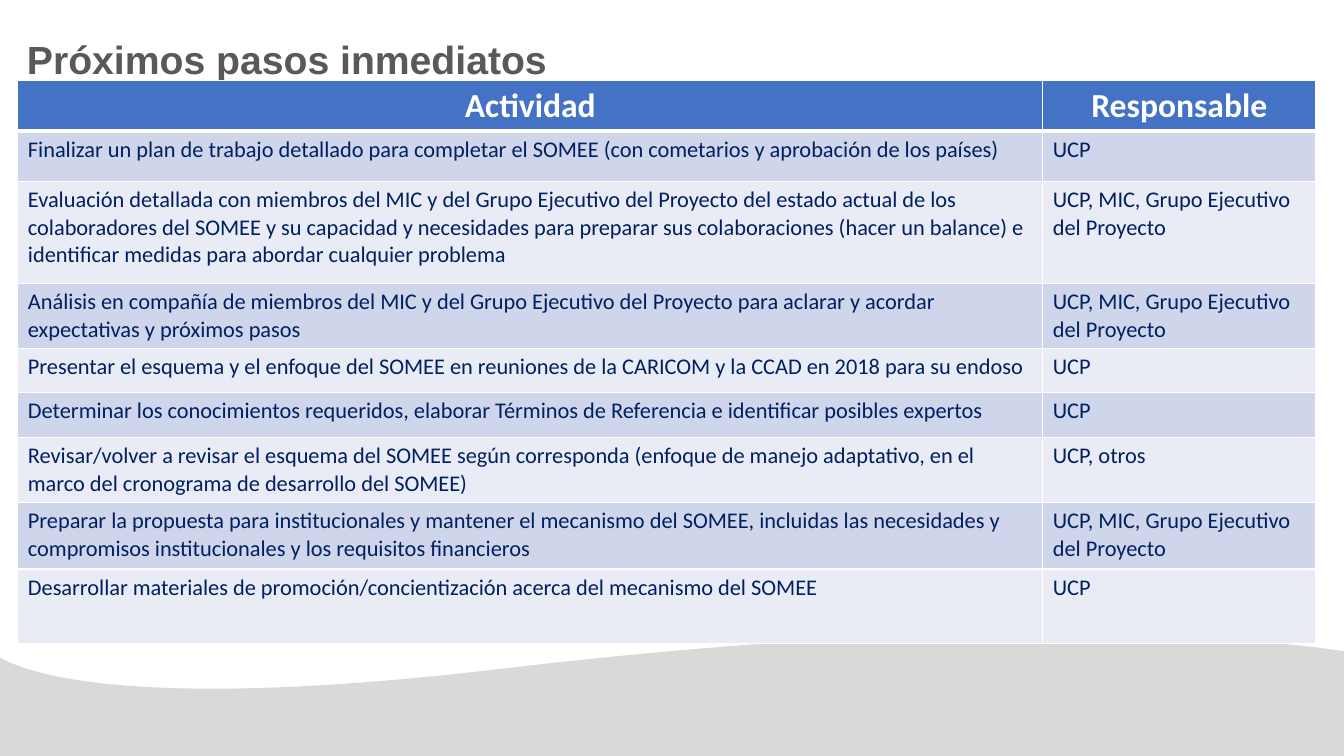
from lxml import etree
from pptx import Presentation
from pptx.dml.color import RGBColor
from pptx.enum.text import PP_ALIGN
from pptx.oxml.ns import qn
from pptx.util import Cm, Pt

WHITE = RGBColor(0xFF, 0xFF, 0xFF)
TITLE_GREY = RGBColor(0x59, 0x59, 0x59)
WAVE_GREY = RGBColor(0xD9, 0xD9, 0xD9)
HEADER_BLUE = RGBColor(0x44, 0x72, 0xC4)
NAVY = RGBColor(0x00, 0x20, 0x60)
BANDS = [RGBColor(0xCF, 0xD5, 0xEA), RGBColor(0xE9, 0xEB, 0xF5)]

UCP = "UCP"
UCP_MIC = "UCP, MIC, Grupo Ejecutivo del Proyecto"
# row height in cm, activity, responsible
ROWS = [
    (1.22, "Actividad", "Responsable"),
    (1.27, "Finalizar un plan de trabajo detallado para completar el SOMEE "
           "(con cometarios y aprobación de los países)", UCP),
    (2.57, "Evaluación detallada con miembros del MIC y del Grupo Ejecutivo del Proyecto "
           "del estado actual de los colaboradores del SOMEE y su capacidad y necesidades "
           "para preparar sus colaboraciones (hacer un balance) e identificar medidas para "
           "abordar cualquier problema", UCP_MIC),
    (1.64, "Análisis en compañía de miembros del MIC y del Grupo Ejecutivo del Proyecto "
           "para aclarar y acordar expectativas y próximos pasos", UCP_MIC),
    (1.1, "Presentar el esquema y el enfoque del SOMEE en reuniones de la CARICOM y la "
          "CCAD en 2018 para su endoso", UCP),
    (1.14, "Determinar los conocimientos requeridos, elaborar Términos de Referencia e "
           "identificar posibles expertos", UCP),
    (1.64, "Revisar/volver a revisar el esquema del SOMEE según corresponda (enfoque de "
           "manejo adaptativo, en el marco del cronograma de desarrollo del SOMEE)",
     "UCP, otros"),
    (1.68, "Preparar la propuesta para institucionales y mantener el mecanismo del SOMEE, "
           "incluidas las necesidades y compromisos institucionales y los requisitos "
           "financieros", UCP_MIC),
    (1.88, "Desarrollar materiales de promoción/concientización acerca del mecanismo "
           "del SOMEE", UCP),
]
COL_WIDTHS = [25.83, 6.88]


def add_run(p, text, font, size, color, bold):
    r = p.add_run()
    r.text = text
    r.font.name, r.font.size, r.font.bold = font, Pt(size), bold
    r.font.color.rgb = color


def set_border(cell, side, width):
    ln = etree.SubElement(cell._tc.get_or_add_tcPr(), qn(f"a:ln{side}"), w=str(Pt(width)))
    fill = etree.SubElement(ln, qn("a:solidFill"))
    etree.SubElement(fill, qn("a:srgbClr"), val=str(WHITE))


prs = Presentation()
prs.slide_width, prs.slide_height = Cm(33.87), Cm(19.05)
s = prs.slides.add_slide(prs.slide_layouts[6])

# Wave along the bottom: two Bézier curves traced in short steps
CURVES = [
    [(33.87, 16.41), (29.59, 15.8), (22.91, 15.65), (12.75, 16.84)],
    [(12.75, 16.84), (3.38, 17.96), (0.66, 16.97), (-0.05, 16.54)],
]
STEPS = 40
outline = []
for curve in CURVES:
    for i in range(STEPS + 1):
        t = i / STEPS
        weights = [(1 - t) ** 3, 3 * t * (1 - t) ** 2, 3 * t ** 2 * (1 - t), t ** 3]
        outline.append(tuple(Cm(sum(w * pt[axis] for w, pt in zip(weights, curve)))
                             for axis in (0, 1)))
outline.append((Cm(-0.05), Cm(19.05)))
builder = s.shapes.build_freeform(Cm(33.87), Cm(19.05))
builder.add_line_segments(outline, close=True)
wave = builder.convert_to_shape()
wave.shadow.inherit = False
wave.fill.solid()
wave.fill.fore_color.rgb = WAVE_GREY
wave.line.fill.background()

# Title
tf = s.shapes.add_textbox(Cm(0.43), Cm(0.53), Cm(26.82), Cm(1.14)).text_frame
tf.word_wrap = True
p = tf.paragraphs[0]
p.line_spacing, p.space_after = Pt(40), Pt(4)
add_run(p, "Próximos pasos inmediatos", "Arial", 28, TITLE_GREY, True)

# Table of activities
table = s.shapes.add_table(len(ROWS), len(COL_WIDTHS), Cm(0.45), Cm(2.03),
                           Cm(sum(COL_WIDTHS)), Cm(sum(row[0] for row in ROWS))).table
for col, width in zip(table.columns, COL_WIDTHS):
    col.width = Cm(width)
for i, (height, *texts) in enumerate(ROWS):
    table.rows[i].height = Cm(height)
    header = i == 0
    for j, text in enumerate(texts):
        cell = table.cell(i, j)
        for side in "LRTB":
            under_header = (i, side) in ((0, "B"), (1, "T"))
            set_border(cell, side, 3 if under_header else 1)
        cell.fill.solid()
        cell.fill.fore_color.rgb = HEADER_BLUE if header else BANDS[(i - 1) % 2]
        p = cell.text_frame.paragraphs[0]
        p.alignment = PP_ALIGN.CENTER if header else PP_ALIGN.LEFT
        add_run(p, text, "Calibri", 24 if header else 16, WHITE if header else NAVY, header)

prs.save("out.pptx")
